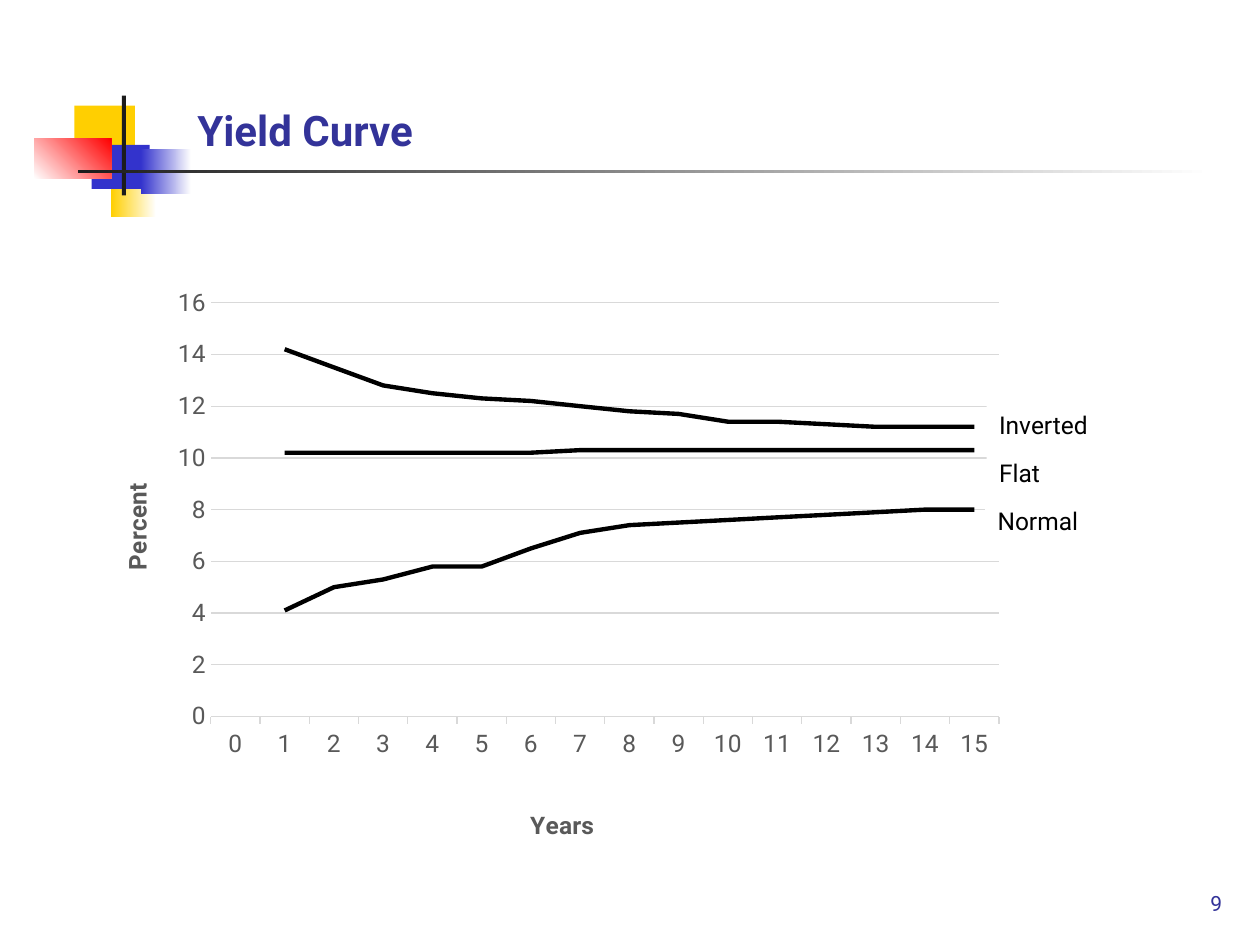
from lxml import etree
from pptx import Presentation
from pptx.chart.data import CategoryChartData
from pptx.dml.color import RGBColor
from pptx.enum.chart import XL_CHART_TYPE, XL_MARKER_STYLE, XL_TICK_MARK
from pptx.enum.shapes import MSO_SHAPE
from pptx.enum.text import MSO_ANCHOR, PP_ALIGN
from pptx.oxml.ns import qn
from pptx.util import Cm, Pt

RECTANGLE = MSO_SHAPE.RECTANGLE
LINE = XL_CHART_TYPE.LINE
NO_MARKER = XL_MARKER_STYLE.NONE
TICK_OUT = XL_TICK_MARK.OUTSIDE
TICK_NONE = XL_TICK_MARK.NONE
TOP, BOTTOM = MSO_ANCHOR.TOP, MSO_ANCHOR.BOTTOM
LEFT, RIGHT = PP_ALIGN.LEFT, PP_ALIGN.RIGHT

THEME = {
    "font": "Roboto",
    "title_size": 24, "body_size": 14, "number_size": 12,
    "title": "333399", "text": "000000", "axis": "595959", "grid": "D9D9D9",
    "white": "FFFFFF", "yellow": "FFCF01", "blue": "3333CC",
    "red": "FF0000", "dark": "1C1C1C",
}

TITLE = ("Yield Curve", (3.73, 1.12, 19.96, 2.13))
PAGE_NUMBER = ("9", (19.1, 17.32, 5.79, 1.27))

ORNAMENT = [
    ((2.24, 3.05, 0.91, 1.32), ("yellow", "white"), 0),
    ((1.5, 2.13, 1.22, 0.89), ("yellow",), 0),
    ((1.85, 2.92, 1.17, 0.89), ("blue",), 0),
    ((2.84, 3, 1.02, 0.91), ("blue", "white"), 0),
    ((0.69, 2.79, 1.55, 0.81), ("white", "red"), 45),
    ((2.46, 1.93, 0.08, 2.01), ("dark",), 0),
    ((1.57, 3.43, 22.86, 0.05), ("dark", "white"), 0),
]

YEARS = [str(year) for year in range(16)]
CURVES = {
    "Normal": [None, 4.1, 5, 5.3, 5.8, 5.8, 6.5, 7.1, 7.4, 7.5, 7.6, 7.7, 7.8, 7.9, 8, 8],
    "Inverted": [None, 14.2, 13.5, 12.8, 12.5, 12.3, 12.2, 12, 11.8, 11.7, 11.4, 11.4,
                 11.3, 11.2, 11.2, 11.2],
    "Flat": [None] + [10.2] * 6 + [10.3] * 9,
}
CHART_BOX = (1.7, 5.59, 18.8, 11.51)
PLOT_BOX = (4.25, 6.11, 15.89, 8.45)
YEARS_TITLE_AT = (10.6, 16.34)
PERCENT_TITLE_AT = (2.33, 9.72)

CURVE_LABELS = [("Inverted", 19.89, 2.82), ("Flat", 19.89, 1.78), ("Normal", 19.86, 2.82)]
LABEL_TOP, LABEL_STEP, LABEL_HEIGHT = 8.1, 0.97, 0.61


def color(name):
    return RGBColor.from_string(THEME[name])


def lengths(box):
    return [Cm(value) for value in box]


def style_font(font, size, shade, bold=False):
    font.name = THEME["font"]
    font.size = Pt(size)
    font.bold = bold
    font.color.rgb = color(shade)


def write_text(shape, text, size, shade, bold=False, align=LEFT, anchor=TOP, spacing=None):
    frame = shape.text_frame
    frame.word_wrap = True
    frame.vertical_anchor = anchor
    para = frame.paragraphs[0]
    para.alignment = align
    para.line_spacing = spacing
    span = para.add_run()
    span.text = text
    style_font(span.font, size, shade, bold)


def add_block(page, box, shades, angle=0):
    block = page.shapes.add_shape(RECTANGLE, *lengths(box))
    block.shadow.inherit = False
    block.line.fill.background()
    if len(shades) == 1:
        block.fill.solid()
        block.fill.fore_color.rgb = color(shades[0])
    else:
        block.fill.gradient()
        block.fill.gradient_angle = angle
        for stop, shade, position in zip(block.fill.gradient_stops, shades, (0, 1)):
            stop.color.rgb = color(shade)
            stop.position = position
    return block


def set_layout(parent, box, before, inner=False):
    for old in parent.findall(qn("c:layout")):
        parent.remove(old)
    layout = etree.Element(qn("c:layout"))
    manual = etree.SubElement(layout, qn("c:manualLayout"))
    left, top, width, height = CHART_BOX
    fractions = [(box[0] - left) / width, (box[1] - top) / height]
    settings = [("layoutTarget", "inner")] if inner else []
    settings += [("xMode", "edge"), ("yMode", "edge")]
    if inner:
        fractions += [box[2] / width, box[3] / height]
    settings += [(key, f"{value:.4f}") for key, value in zip("xywh", fractions)]
    for key, value in settings:
        etree.SubElement(manual, qn(f"c:{key}")).set("val", value)
    parent.find(qn(before)).addprevious(layout)


def style_axis(axis, title, title_at):
    style_font(axis.tick_labels.font, THEME["body_size"], "axis")
    span = axis.axis_title.text_frame.paragraphs[0].add_run()
    span.text = title
    style_font(span.font, THEME["body_size"], "axis", bold=True)
    set_layout(axis.axis_title._element, title_at, "c:overlay")


def style_line(line, shade, width):
    line.color.rgb = color(shade)
    line.width = Pt(width)


def add_yield_chart(page):
    data = CategoryChartData()
    data.categories = YEARS
    for name, values in CURVES.items():
        data.add_series(name, values)
    chart = page.shapes.add_chart(LINE, *lengths(CHART_BOX), data).chart
    chart.has_legend = False
    chart.has_title = False
    style_font(chart.font, THEME["body_size"], "text")

    plot = chart.plots[0]
    plot.vary_by_categories = False
    for curve in plot.series:
        curve.smooth = False
        curve.marker.style = NO_MARKER
        style_line(curve.format.line, "text", 2.5)

    years, percent = chart.category_axis, chart.value_axis
    style_axis(years, "Years", YEARS_TITLE_AT)
    years.major_tick_mark = TICK_OUT
    style_line(years.format.line, "grid", 0.75)

    style_axis(percent, "Percent", PERCENT_TITLE_AT)
    percent.minimum_scale, percent.maximum_scale, percent.major_unit = 0, 16, 2
    percent.major_tick_mark = TICK_NONE
    percent.format.line.fill.background()
    style_line(percent.major_gridlines.format.line, "grid", 0.75)

    area = chart._chartSpace.find(".//" + qn("c:plotArea"))
    set_layout(area, PLOT_BOX, "c:lineChart", inner=True)


def main():
    deck = Presentation()
    deck.slide_width, deck.slide_height = Cm(25.4), Cm(19.05)
    page = deck.slides.add_slide(deck.slide_layouts[6])

    for box, shades, angle in ORNAMENT:
        add_block(page, box, shades, angle)

    text, box = TITLE
    write_text(page.shapes.add_textbox(*lengths(box)), text, THEME["title_size"], "title",
               bold=True, anchor=BOTTOM)
    text, box = PAGE_NUMBER
    write_text(page.shapes.add_textbox(*lengths(box)), text, THEME["number_size"], "title",
               align=RIGHT, anchor=BOTTOM)

    add_yield_chart(page)

    for index, (text, left, width) in enumerate(CURVE_LABELS):
        top = LABEL_TOP + index * LABEL_STEP
        label = add_block(page, (left, top, width, LABEL_HEIGHT), ("white",))
        write_text(label, text, THEME["body_size"], "text", spacing=1.07)

    deck.save("out.pptx")


if __name__ == "__main__":
    main()
